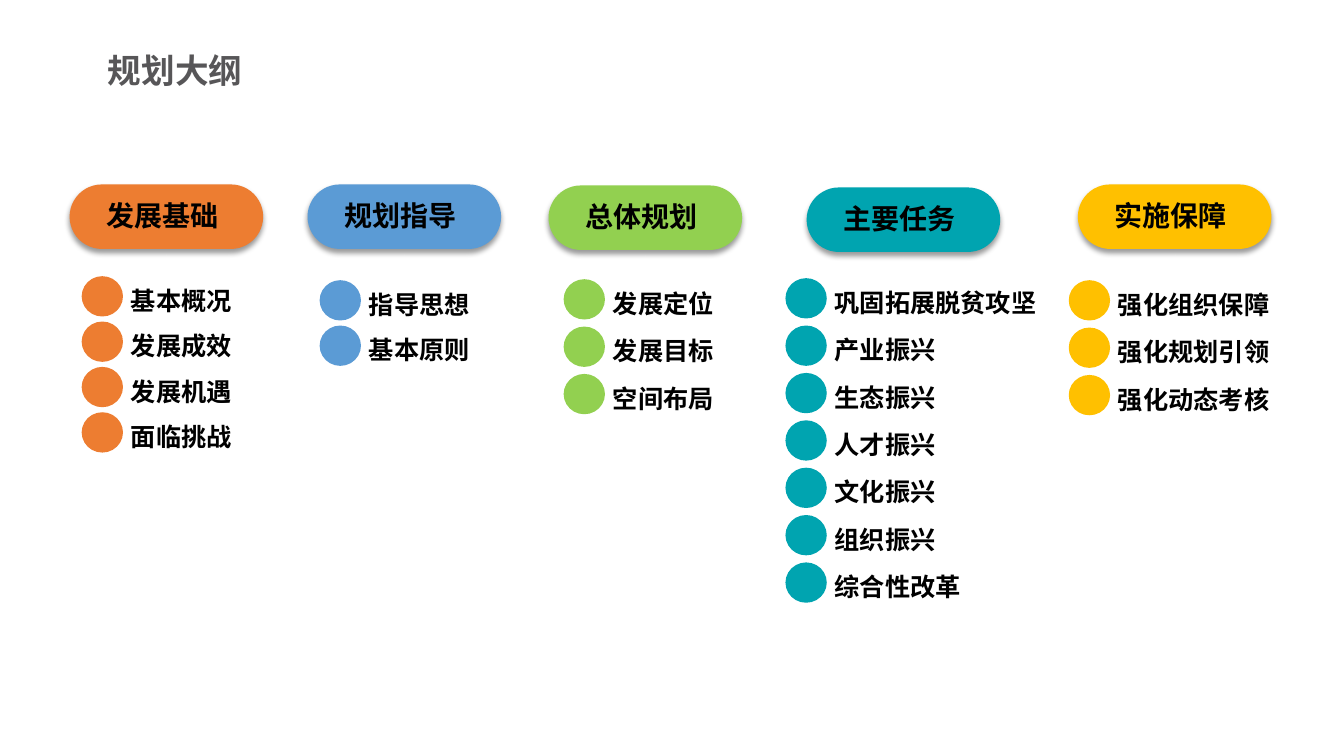
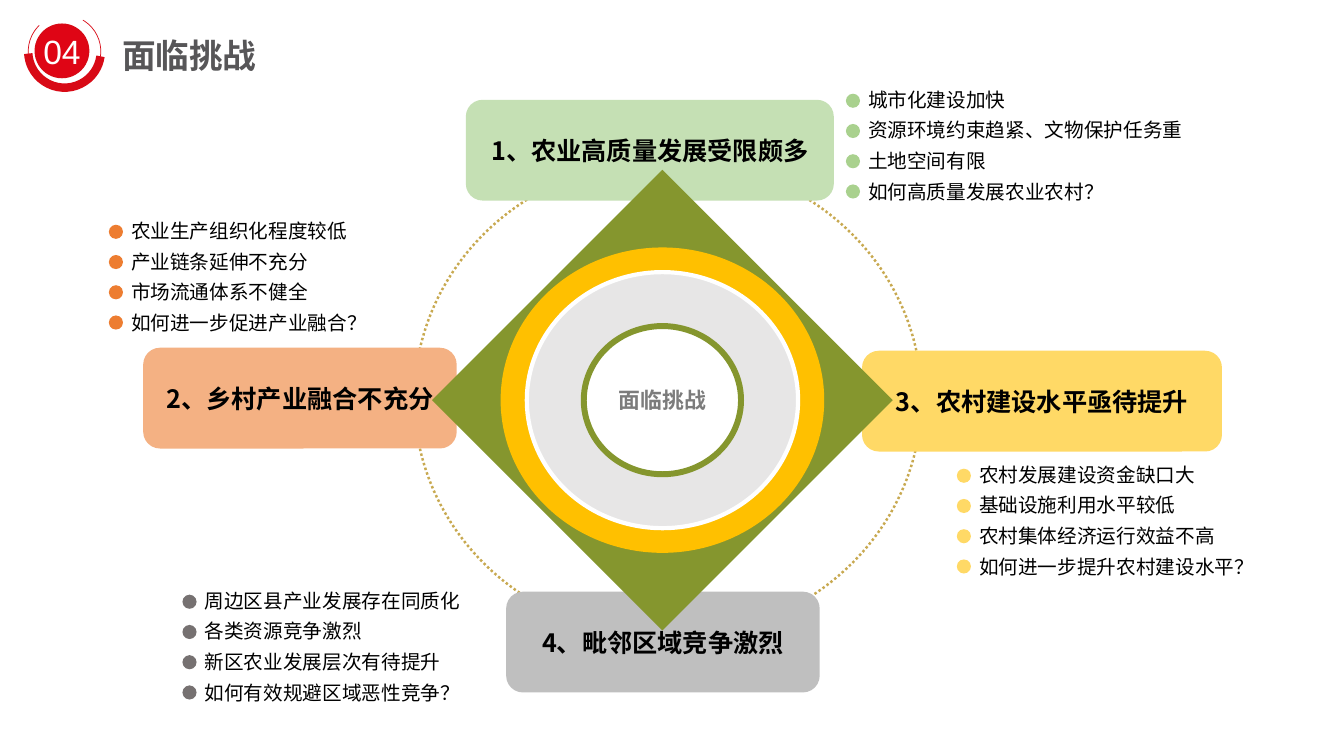
from dataclasses import dataclass

from lxml import etree
from pptx import Presentation
from pptx.dml.color import RGBColor
from pptx.enum.dml import MSO_LINE
from pptx.enum.shapes import MSO_SHAPE
from pptx.enum.text import MSO_ANCHOR, MSO_AUTO_SIZE, PP_ALIGN
from pptx.oxml import parse_xml
from pptx.oxml.ns import nsdecls, qn
from pptx.util import Inches, Pt

OVAL = MSO_SHAPE.OVAL
ROUNDED = MSO_SHAPE.ROUNDED_RECTANGLE
DIAMOND = MSO_SHAPE.DIAMOND
ARC = MSO_SHAPE.ARC
DOTTED = MSO_LINE.ROUND_DOT
TOP, MIDDLE = MSO_ANCHOR.TOP, MSO_ANCHOR.MIDDLE
LEFT, CENTER = PP_ALIGN.LEFT, PP_ALIGN.CENTER
NO_FIT = MSO_AUTO_SIZE.NONE
TITLE_ONLY, FOUR_LISTS = 5, 4


@dataclass(frozen=True)
class Theme:
    font: str = "Noto Sans CJK SC"
    number_font: str = "Arial"
    ink: str = "000000"
    title: str = "575658"
    white: str = "FFFFFF"
    orange: str = "ED7D31"
    blue: str = "5B9BD5"
    green: str = "92D050"
    teal: str = "00A4B0"
    gold: str = "FFC000"
    olive: str = "85962E"
    light_gray: str = "E7E6E6"
    hub_text: str = "7C7C7C"
    orbit: str = "C8A950"
    badge: str = "DF0515"
    badge_line: str = "D80A16"
    title_size: float = 24
    heading_size: float = 20
    label_size: float = 18
    hub_size: float = 15.6
    list_size: float = 14


THEME = Theme()

# Outline columns: heading, colour, left, top, list offset, list top, pitch, items
COLUMNS = [
    ("发展基础", THEME.orange, 0.69, 1.83, 0.12, 2.74, 0.45,
     ["基本概况", "发展成效", "发展机遇", "面临挑战"]),
    ("规划指导", THEME.blue, 3.05, 1.83, 0.12, 2.78, 0.45,
     ["指导思想", "基本原则"]),
    ("总体规划", THEME.green, 5.44, 1.84, 0.15, 2.77, 0.47,
     ["发展定位", "发展目标", "空间布局"]),
    ("主要任务", THEME.teal, 8, 1.86, -0.21, 2.76, 0.47,
     ["巩固拓展脱贫攻坚", "产业振兴", "生态振兴", "人才振兴", "文化振兴",
      "组织振兴", "综合性改革"]),
    ("实施保障", THEME.gold, 10.69, 1.83, -0.09, 2.78, 0.47,
     ["强化组织保障", "强化规划引领", "强化动态考核"]),
]

# Challenge cards: text, fill, left, top, width
CARDS = [
    ("4、毗邻区域竞争激烈", "BFBFBF", 5.02, 5.87, 3.11),
    ("3、农村建设水平亟待提升", "FFD966", 8.55, 3.48, 3.57),
    ("2、乡村产业融合不充分", "F4B183", 1.42, 3.45, 3.11),
    ("1、农业高质量发展受限颇多", "C5E0B4", 4.62, 0.99, 3.65),
]

# Challenge lists: dot colour, left, top, items
LISTS = [
    ("A9D18E", 8.39, 0.87,
     ["城市化建设加快", "资源环境约束趋紧、文物保护任务重", "土地空间有限",
      "如何高质量发展农业农村？"]),
    (THEME.orange, 1.08, 2.17,
     ["农业生产组织化程度较低", "产业链条延伸不充分", "市场流通体系不健全",
      "如何进一步促进产业融合？"]),
    ("FFD966", 9.49, 4.59,
     ["农村发展建设资金缺口大", "基础设施利用水平较低", "农村集体经济运行效益不高",
      "如何进一步提升农村建设水平？"]),
    ("767171", 1.81, 5.84,
     ["周边区县产业发展存在同质化", "各类资源竞争激烈", "新区农业发展层次有待提升",
      "如何有效规避区域恶性竞争？"]),
]


def color(value):
    return RGBColor.from_string(value)


def place(shape, left, top, width, height):
    shape.left, shape.top = Inches(left), Inches(top)
    shape.width, shape.height = Inches(width), Inches(height)


def set_frame(shape, insets=(0, 0, 0, 0), anchor=MIDDLE, wrap=True):
    frame = shape.text_frame
    frame.auto_size = NO_FIT
    frame.word_wrap = wrap
    frame.vertical_anchor = anchor
    (frame.margin_left, frame.margin_top,
     frame.margin_right, frame.margin_bottom) = map(Inches, insets)
    return frame


def add_run(paragraph, text, size, ink=THEME.ink, bold=True, font=THEME.font):
    run = paragraph.add_run()
    run.text = text
    run.font.size = Pt(size)
    run.font.bold = bold
    run.font.color.rgb = color(ink)
    run.font.name = font
    east_asian = etree.SubElement(run._r.get_or_add_rPr(), qn("a:ea"))
    east_asian.set("typeface", font)


def write(shape, text, size, align=CENTER, spacing=1.0, frame=None, **style):
    paragraph = set_frame(shape, **(frame or {})).paragraphs[0]
    paragraph.alignment = align
    paragraph.line_spacing = spacing
    add_run(paragraph, text, size, **style)


def add_shape(slide, kind, box, fill=None, line=None, line_width=1):
    shape = slide.shapes.add_shape(kind, *map(Inches, box))
    shape.shadow.inherit = False
    if fill:
        shape.fill.solid()
        shape.fill.fore_color.rgb = color(fill)
    else:
        shape.fill.background()
    if line:
        shape.line.color.rgb = color(line)
        shape.line.width = Pt(line_width)
    else:
        shape.line.fill.background()
    return shape


def add_drop_shadow(shape):
    effects = shape._element.spPr.find(qn("a:effectLst"))
    effects.append(parse_xml(
        f'<a:outerShdw {nsdecls("a")} blurRad="{Pt(4)}" dist="{Pt(3)}" '
        'dir="5400000" algn="t" rotWithShape="0"><a:srgbClr val="000000">'
        '<a:alpha val="40000"/></a:srgbClr></a:outerShdw>'))


def remove_bullet(paragraph):
    properties = paragraph._p.get_or_add_pPr()
    properties.set("marL", "0")
    properties.set("indent", "0")
    etree.SubElement(properties, qn("a:buNone"))


def set_title(slide, text, left, top):
    title = slide.shapes.title
    place(title, left, top, 1.58, 0.47)
    write(title, text, THEME.title_size, align=LEFT, ink=THEME.title,
          frame={"insets": (0.07, 0.03, 0.07, 0.03)})


def add_column(slide, heading, fill, left, top, list_offset, list_top, pitch, items):
    # Heading pill
    pill = add_shape(slide, ROUNDED, (left, top, 1.92, 0.64), fill)
    pill.adjustments[0] = 0.5
    add_drop_shadow(pill)
    write(pill, heading, THEME.heading_size, spacing=0.9,
          frame={"insets": (0, 0.02, 0.08, 0)})
    # Dots and labels
    dot_left = left + list_offset
    for index, item in enumerate(items):
        dot_top = list_top + index * pitch
        add_shape(slide, OVAL, (dot_left, dot_top, 0.41, 0.4), fill)
        label = slide.shapes.add_textbox(
            Inches(dot_left + 0.39), Inches(dot_top - 0.02),
            Inches(0.25 * len(item) + 0.3), Inches(0.46))
        write(label, item, THEME.label_size, align=LEFT, spacing=1.2,
              frame={"insets": (0.1, 0.05, 0.1, 0.05), "anchor": TOP})


def add_badge(slide, number, left, top):
    disc = add_shape(slide, OVAL, (left + 0.07, top + 0.09, 0.53, 0.53),
                     THEME.badge, THEME.badge_line)
    write(disc, number, THEME.title_size, ink=THEME.white, bold=False,
          font=THEME.number_font, frame={"wrap": False})
    # Thin and thick arcs: start and end adjustments, line width
    for start, end, width in ((34.06, 205.29, 0.5), (74.49, 175.71, 6)):
        arc = add_shape(slide, ARC, (left, top, 0.72, 0.72),
                        line=THEME.badge_line, line_width=width)
        arc.adjustments[0], arc.adjustments[1] = start, end
        arc.rotation = 243.7


def add_card(slide, text, fill, left, top, width):
    card = add_shape(slide, ROUNDED, (left, top, width, 1), fill)
    write(card, text, THEME.label_size)


def add_hub(slide, text, center_x, center_y):
    # Layers from back to front: kind, width, height, fill, line, line width
    layers = [
        (DIAMOND, 4.57, 4.57, THEME.olive, None, 0),
        (OVAL, 3.21, 3.03, THEME.gold, None, 0),
        (OVAL, 2.69, 2.54, THEME.light_gray, THEME.white, 3),
        (OVAL, 1.56, 1.47, THEME.white, THEME.olive, 4.25),
    ]
    for kind, width, height, fill, line, line_width in layers:
        box = (center_x - width / 2, center_y - height / 2, width, height)
        core = add_shape(slide, kind, box, fill, line, line_width)
    write(core, text, THEME.hub_size, ink=THEME.hub_text)


def add_list(slide, placeholder, dot_color, left, top, items):
    place(placeholder, left + 0.22, top, 3.4, 1.24)
    frame = set_frame(placeholder, anchor=TOP)
    for index, item in enumerate(items):
        paragraph = frame.add_paragraph() if index else frame.paragraphs[0]
        paragraph.alignment = LEFT
        paragraph.line_spacing = 1.0
        paragraph.space_before = Pt(0)
        paragraph.space_after = Pt(5.1)
        remove_bullet(paragraph)
        add_run(paragraph, item, THEME.list_size, bold=False)
        # Dot beside the line
        add_shape(slide, OVAL, (left, top + 0.06 + index * 0.3, 0.14, 0.14), dot_color)


def build_outline(presentation):
    slide = presentation.slides.add_slide(presentation.slide_layouts[TITLE_ONLY])
    set_title(slide, "规划大纲", 1, 0.46)
    for column in COLUMNS:
        add_column(slide, *column)


def build_challenges(presentation):
    slide = presentation.slides.add_slide(presentation.slide_layouts[FOUR_LISTS])
    set_title(slide, "面临挑战", 1.14, 0.31)
    add_badge(slide, "04", 0.28, 0.15)
    # Orbit, cards and hub
    orbit = add_shape(slide, OVAL, (4.11, 1.58, 5.03, 4.75),
                      line=THEME.orbit, line_width=1.75)
    orbit.line.dash_style = DOTTED
    for card in CARDS:
        add_card(slide, *card)
    add_hub(slide, "面临挑战", 6.57, 3.97)
    # Lists beside the cards
    for index, content in enumerate(LISTS, start=1):
        add_list(slide, slide.placeholders[index], *content)


def main():
    presentation = Presentation()
    presentation.slide_width = Inches(13.33)
    presentation.slide_height = Inches(7.5)
    build_outline(presentation)
    build_challenges(presentation)
    presentation.save("out.pptx")


if __name__ == "__main__":
    main()
